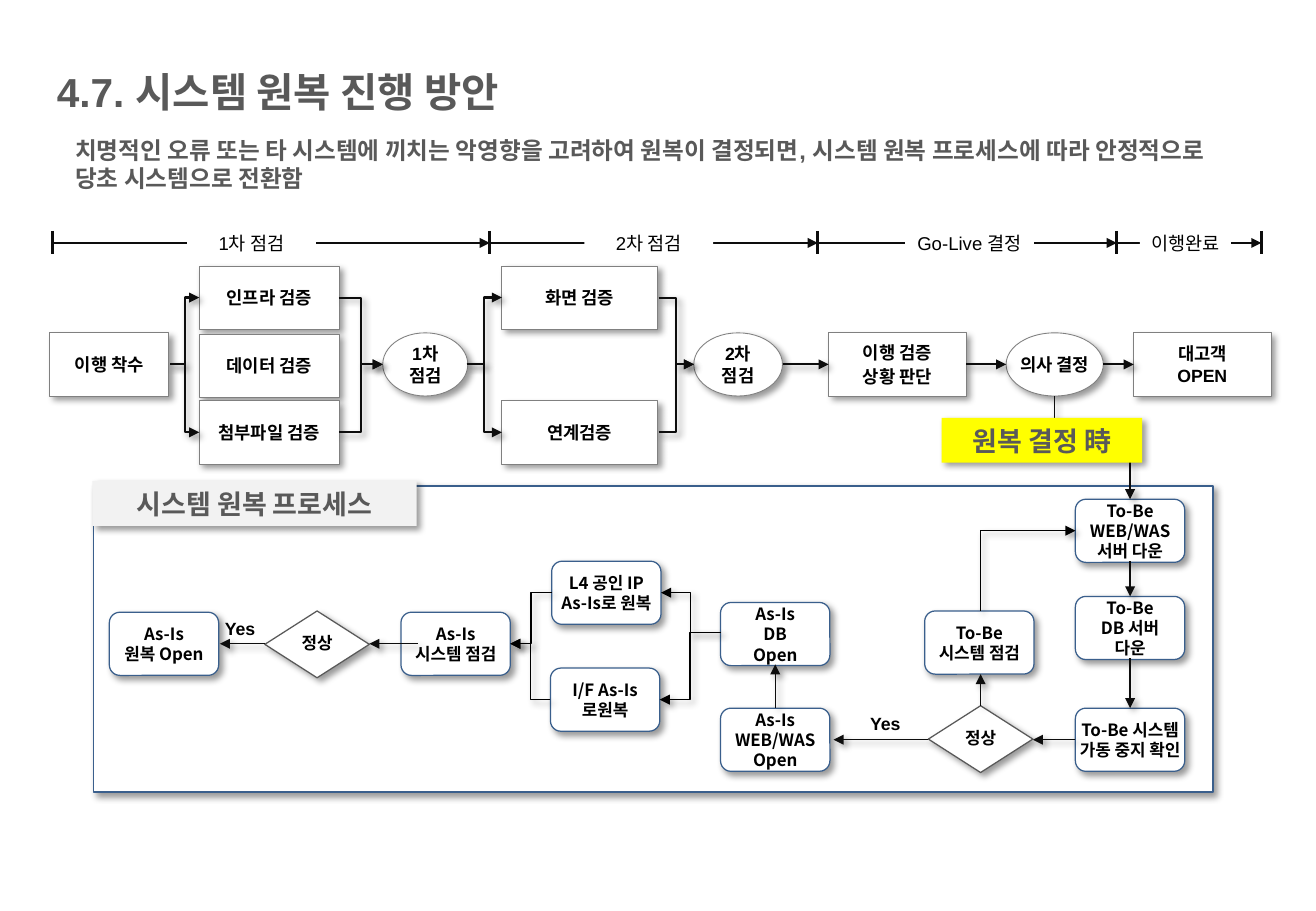
from dataclasses import dataclass

import pptx
import pptx.dml.color
import pptx.enum.shapes
import pptx.enum.text
import pptx.oxml.ns
import pptx.util
from lxml import etree

Inches, Pt, qn = pptx.util.Inches, pptx.util.Pt, pptx.oxml.ns.qn
Shape = pptx.enum.shapes.MSO_SHAPE
Line = pptx.enum.shapes.MSO_CONNECTOR
Align = pptx.enum.text.PP_ALIGN
Anchor = pptx.enum.text.MSO_ANCHOR

KOREAN = "Noto Sans CJK KR"
BLACK, WHITE, INK, GRAY, NAVY = "000000", "FFFFFF", "0D0D0D", "595959", "3A5F8C"
Point = tuple[float, float]


@dataclass(frozen=True)
class Look:
    shape: int = Shape.RECTANGLE
    fill: str | None = WHITE
    line: str | None = None
    weight: float = 0
    shadow: bool = True
    size: float = 10.5
    font: str = "Arial"
    color: str = BLACK
    bold: bool = True
    align: int = Align.CENTER
    anchor: int = Anchor.MIDDLE
    inset: Point = (0, 0)
    wrap: bool = True
    spacing: float | None = None


@dataclass(frozen=True)
class Node:
    look: Look
    left: float
    top: float
    width: float
    height: float
    text: str = ""


@dataclass(frozen=True)
class Arrow:
    start: Point
    end: Point
    route: str = "straight"  # straight, elbow, drop (vertical first) or corner
    weight: float = 0.75
    color: str = INK
    head: bool = True
    shadow: bool = True


CHECK_INSET = (0.02, 0.05)
PANEL = Look(line=NAVY, weight=1)
PHASE = Look(shadow=False, size=11, bold=False)
CHECK = Look(line="808080", weight=0.5, inset=CHECK_INSET, wrap=False)
JUDGE = Look(line="808080", weight=0.5, inset=CHECK_INSET, wrap=False, font=KOREAN)
GATE = Look(Shape.OVAL, line="808080", weight=0.5, inset=CHECK_INSET, wrap=False)
STEP = Look(Shape.ROUNDED_RECTANGLE, line=NAVY, size=10, font=KOREAN)
DECISION = Look(Shape.FLOWCHART_DECISION, line=GRAY, weight=0.75, size=10,
                wrap=False, spacing=0.9)
PROCESS_TAG = Look(fill="F2F2F2", size=16, color=GRAY, inset=(0.1, 0.05))
ROLLBACK_TAG = Look(fill="FFFF00", size=16, color=GRAY, inset=(0.1, 0.05))
HEADING = Look(fill=None, shadow=False, size=24, color=GRAY, align=Align.LEFT,
               anchor=Anchor.TOP, inset=(0.1, 0.05))
SUMMARY = Look(fill=None, shadow=False, size=14, color=GRAY, align=Align.LEFT,
               anchor=Anchor.TOP, inset=(0.1, 0.05))
ANSWER = Look(fill=None, shadow=False, anchor=Anchor.TOP)

AXIS_Y, MAIN_Y, UPPER_Y, LOWER_Y = 2.0, 3.0, 2.45, 3.56
PHASE_BOUNDS = [0.43, 4.03, 6.73, 9.19, 10.38]
PHASES = [Node(PHASE, left, 1.86, 1.06, 0.28, text) for left, text in
          [(1.54, "1차 점검"), (4.81, "2차 점검"), (7.45, "Go-Live 결정")]]
PHASES.append(Node(PHASE, 9.38, 1.89, 0.75, 0.23, "이행완료"))

CHECKS = [Node(look, left, top, width, 0.52, text) for look, left, top, width, text in [
    (CHECK, 0.41, 2.74, 0.98, "이행 착수"),
    (CHECK, 1.64, 2.19, 1.15, "인프라 검증"),
    (CHECK, 1.64, 2.75, 1.15, "데이터 검증"),
    (CHECK, 1.64, 3.3, 1.15, "첨부파일 검증"),
    (GATE, 3.15, 2.74, 0.7, "1차\v점검"),
    (CHECK, 4.13, 2.19, 1.28, "화면 검증"),
    (CHECK, 4.13, 3.3, 1.28, "연계검증"),
    (GATE, 5.71, 2.74, 0.73, "2차\v점검"),
    (JUDGE, 6.82, 2.74, 1.13, "이행 검증\n상황 판단"),
    (GATE, 8.28, 2.74, 0.8, "의사 결정"),
    (CHECK, 9.33, 2.74, 1.13, "대고객\vOPEN"),
]]
STEPS = [Node(STEP, left, top, 0.9, 0.52, text) for left, top, text in [
    (8.85, 4.11, "To-Be WEB/WAS 서버 다운"),
    (8.85, 4.91, "To-Be\nDB 서버\n다운"),
    (8.85, 5.83, "To-Be 시스템 가동 중지 확인"),
    (7.61, 5.03, "To-Be\n시스템 점검"),
    (5.93, 5.83, "As-Is\nWEB/WAS\nOpen"),
    (5.93, 4.96, "As-Is\nDB\nOpen"),
    (4.54, 4.62, "L4 공인 IP\nAs-Is로 원복"),
    (4.53, 5.5, "I/F As-Is로원복"),
    (3.3, 5.04, "As-Is\n시스템 점검"),
    (0.9, 5.04, "As-Is\n원복 Open"),
]]
DECISIONS = [Node(DECISION, left, top, 0.86, 0.55, "정상")
             for left, top in [(7.64, 5.81), (2.18, 5.03)]]
ANSWERS = [Node(ANSWER, left, top, 0.75, 0.18, "Yes")
           for left, top in [(6.91, 5.87), (1.6, 5.09)]]

TICKS = [Arrow((x, 1.9), (x, 2.09), weight=2, head=False, shadow=False)
         for x in PHASE_BOUNDS]
SPANS = [Arrow((x, AXIS_Y), (following, AXIS_Y), shadow=False)
         for x, following in zip(PHASE_BOUNDS, PHASE_BOUNDS[1:])]
BRANCHES = [Arrow((left, MAIN_Y), (right, y), "elbow", 1.25)
            for left, right in [(1.4, 1.64), (3.84, 4.13)] for y in (UPPER_Y, LOWER_Y)]
MERGES = [Arrow((left, y), (right, MAIN_Y), "elbow", 1.25)
          for left, right in [(2.79, 3.15), (5.42, 5.71)] for y in (UPPER_Y, LOWER_Y)]
ADVANCES = [Arrow((left, MAIN_Y), (right, MAIN_Y), weight=1.25)
            for left, right in [(6.44, 6.82), (7.95, 8.28), (9.08, 9.33)]]
ROLLBACK = [Arrow(start, end) for start, end in [
    ((9.3, 4.62), (9.3, 4.91)), ((9.3, 5.42), (9.3, 5.83)),
    ((8.85, 6.09), (8.5, 6.09)), ((7.64, 6.09), (6.86, 6.09)),
    ((8.07, 5.81), (8.07, 5.55)), ((6.38, 5.83), (6.38, 5.47)),
    ((3.44, 5.3), (3.04, 5.3)), ((2.18, 5.3), (1.81, 5.3)),
]]
ROLLBACK += [Arrow(start, end, "elbow", color=BLACK) for start, end in [
    ((5.93, 5.21), (5.44, 4.88)), ((5.93, 5.21), (5.43, 5.76)),
    ((4.54, 4.88), (4.2, 5.3)), ((4.53, 5.76), (4.2, 5.3)),
]]
ROLLBACK += [Arrow((8.68, 3.26), (9.3, 4.11), "drop"),
             Arrow((8.07, 5.03), (8.85, 4.37), "corner", color=BLACK)]


def rgb(color: str) -> pptx.dml.color.RGBColor:
    return pptx.dml.color.RGBColor.from_string(color)


def set_shadow(properties: etree._Element, visible: bool) -> None:
    effects = etree.SubElement(properties, qn("a:effectLst"))
    if visible:
        shadow = etree.SubElement(effects, qn("a:outerShdw"), blurRad=str(Pt(4)),
                                  dist=str(Pt(3)), dir="2700000", algn="tl", rotWithShape="0")
        tint = etree.SubElement(shadow, qn("a:srgbClr"), val=BLACK)
        etree.SubElement(tint, qn("a:alpha"), val="40000")


def write_text(frame, look: Look, text: str) -> None:
    frame.text = text
    frame.word_wrap = look.wrap
    frame.vertical_anchor = look.anchor
    frame.margin_left = frame.margin_right = Inches(look.inset[0])
    frame.margin_top = frame.margin_bottom = Inches(look.inset[1])
    for index, paragraph in enumerate(frame.paragraphs):
        paragraph.alignment = look.align
        if look.spacing:
            paragraph.line_spacing = look.spacing
        if index and look is JUDGE:
            paragraph.space_before = Pt(2)
        for line_break in paragraph._p.findall(qn("a:br")):
            etree.SubElement(line_break, qn("a:rPr"), sz=str(int(look.size * 100)))
        for run in paragraph.runs:
            run.font.size, run.font.bold = Pt(look.size), look.bold
            run.font.name, run.font.color.rgb = look.font, rgb(look.color)
            etree.SubElement(run._r.get_or_add_rPr(), qn("a:ea"), typeface=KOREAN)


def draw_node(shapes, node: Node) -> None:
    look = node.look
    box = [Inches(value) for value in (node.left, node.top, node.width, node.height)]
    if look.fill is None:
        write_text(shapes.add_textbox(*box).text_frame, look, node.text)
        return
    shape = shapes.add_shape(look.shape, *box)
    shape.fill.solid()
    shape.fill.fore_color.rgb = rgb(look.fill)
    if look.line:
        shape.line.color.rgb = rgb(look.line)
        shape.line.width = Pt(look.weight)
    else:
        shape.line.fill.background()
    set_shadow(shape._element.spPr, look.shadow)
    if node.text:
        write_text(shape.text_frame, look, node.text)


def draw_arrow(shapes, arrow: Arrow) -> None:
    (x1, y1), (x2, y2) = arrow.start, arrow.end
    turned = arrow.route in ("drop", "corner")
    if turned:  # lay the route out sideways, then rotate it by a quarter turn
        cx, cy, dx, dy = (x1 + x2) / 2, (y1 + y2) / 2, (x2 - x1) / 2, (y2 - y1) / 2
        x1, y1, x2, y2 = cx - dy, cy + dx, cx + dy, cy - dx
    kind = Line.STRAIGHT if arrow.route == "straight" else Line.ELBOW
    connector = shapes.add_connector(kind, *[Inches(value) for value in (x1, y1, x2, y2)])
    properties = connector._element.spPr
    if turned:
        properties.find(qn("a:xfrm")).set("rot", "5400000")
    if arrow.route == "corner":
        properties.find(qn("a:prstGeom")).set("prst", "bentConnector2")
    connector.line.color.rgb = rgb(arrow.color)
    connector.line.width = Pt(arrow.weight)
    if arrow.head:
        etree.SubElement(properties.find(qn("a:ln")), qn("a:tailEnd"), type="triangle")
    set_shadow(properties, arrow.shadow)


def main() -> None:
    deck = pptx.Presentation()
    deck.slide_width, deck.slide_height = Inches(10.83), Inches(7.5)
    shapes = deck.slides.add_slide(deck.slide_layouts[6]).shapes
    items = [
        Node(PANEL, 0.77, 4, 9.21, 2.52),
        Node(HEADING, 0.37, 0.5, 9.31, 0.5, "4.7. 시스템 원복 진행 방안"),
        *TICKS, *SPANS, *PHASES, *CHECKS, *STEPS, *DECISIONS, *ANSWERS,
        *BRANCHES, *MERGES, *ADVANCES, *ROLLBACK,
        Node(PROCESS_TAG, 0.76, 3.96, 2.67, 0.37, "시스템 원복 프로세스"),
        Node(ROLLBACK_TAG, 7.75, 3.44, 1.65, 0.37, "원복 결정 時"),
        Node(SUMMARY, 0.52, 1.07, 9.87, 0.57,
             "치명적인 오류 또는 타 시스템에 끼치는 악영향을 고려하여 원복이 결정되면, "
             "시스템 원복 프로세스에 따라 안정적으로 당초 시스템으로 전환함"),
    ]
    for item in items:
        if isinstance(item, Node):
            draw_node(shapes, item)
        else:
            draw_arrow(shapes, item)
    deck.save("out.pptx")


if __name__ == "__main__":
    main()
